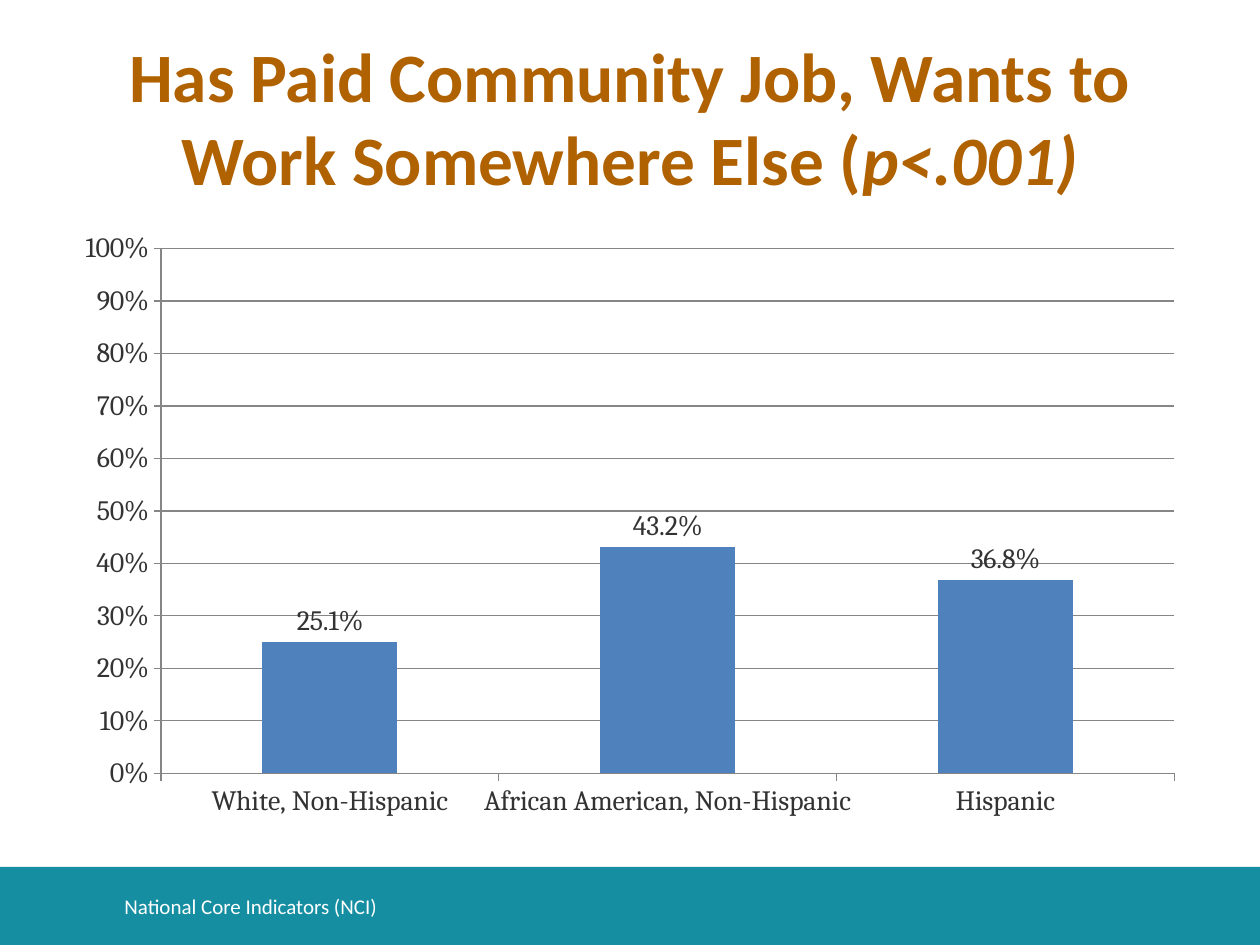
from dataclasses import dataclass

from pptx import Presentation
from pptx.chart.data import CategoryChartData
from pptx.dml.color import RGBColor
from pptx.enum.chart import XL_CHART_TYPE, XL_LABEL_POSITION, XL_TICK_MARK
from pptx.enum.shapes import MSO_SHAPE
from pptx.enum.text import MSO_ANCHOR, MSO_AUTO_SIZE, PP_ALIGN
from pptx.util import Pt


@dataclass(frozen=True)
class Theme:
    title: RGBColor = RGBColor(0xB0, 0x61, 0x00)
    band: RGBColor = RGBColor(0x16, 0x8E, 0xA2)
    bar: RGBColor = RGBColor(0x4F, 0x81, 0xBD)
    line: RGBColor = RGBColor(0x86, 0x86, 0x86)
    ink: RGBColor = RGBColor(0x33, 0x33, 0x33)
    white: RGBColor = RGBColor(0xFF, 0xFF, 0xFF)
    text_font: str = "Calibri"
    chart_font: str = "Cambria"
    title_size: float = 39.6
    chart_size: float = 16
    footer_size: float = 12


THEME = Theme()


def style_font(font, name, size, color):
    font.name = name
    font.size = Pt(size)
    font.color.rgb = color


def add_run(p, text, size, color, bold=False, italic=False):
    r = p.add_run()
    r.text = text
    style_font(r.font, THEME.text_font, size, color)
    r.font.bold = bold
    r.font.italic = italic


def set_frame(tf):
    tf.word_wrap = True
    tf.auto_size = MSO_AUTO_SIZE.NONE
    tf.vertical_anchor = MSO_ANCHOR.MIDDLE


def set_title(s, runs):
    sp = s.shapes.title
    sp.left, sp.top, sp.width, sp.height = Pt(36), Pt(21.6), Pt(648), Pt(90)
    set_frame(sp.text_frame)
    p = sp.text_frame.paragraphs[0]
    p.alignment = PP_ALIGN.CENTER
    for text, italic in runs:
        add_run(p, text, THEME.title_size, THEME.title, bold=True, italic=italic)


def add_footer(s, text):
    band = s.shapes.add_shape(MSO_SHAPE.RECTANGLE, 0, Pt(495.4), Pt(720), Pt(44.6))
    band.shadow.inherit = False
    band.fill.solid()
    band.fill.fore_color.rgb = THEME.band
    band.line.fill.background()

    sp = s.shapes.add_textbox(Pt(64), Pt(503.5), Pt(533), Pt(29))
    set_frame(sp.text_frame)
    add_run(sp.text_frame.paragraphs[0], text, THEME.footer_size, THEME.white)


def style_axis(axis):
    axis.major_tick_mark = XL_TICK_MARK.OUTSIDE
    axis.minor_tick_mark = XL_TICK_MARK.NONE
    axis.format.line.color.rgb = THEME.line
    style_font(axis.tick_labels.font, THEME.chart_font, THEME.chart_size, THEME.ink)


def add_bar_chart(s, values):
    data = CategoryChartData()
    data.categories = list(values)
    data.add_series("Series 1", list(values.values()))
    chart = s.shapes.add_chart(XL_CHART_TYPE.COLUMN_CLUSTERED, Pt(36), Pt(126),
                               Pt(648), Pt(348), data).chart
    chart.has_title = False
    chart.has_legend = False
    style_font(chart.font, THEME.chart_font, THEME.chart_size, THEME.ink)

    # Axes
    style_axis(chart.category_axis)
    axis = chart.value_axis
    style_axis(axis)
    axis.minimum_scale, axis.maximum_scale, axis.major_unit = 0, 1, 0.1
    axis.tick_labels.number_format = "0%"
    axis.tick_labels.number_format_is_linked = False
    axis.has_major_gridlines = True
    axis.major_gridlines.format.line.color.rgb = THEME.line

    # Bars and their labels
    plot = chart.plots[0]
    plot.gap_width = 150
    plot.vary_by_categories = False
    series = plot.series[0]
    series.format.fill.solid()
    series.format.fill.fore_color.rgb = THEME.bar
    labels = series.data_labels
    labels.show_value = True
    labels.number_format = "0.0%"
    labels.number_format_is_linked = False
    labels.position = XL_LABEL_POSITION.OUTSIDE_END
    style_font(labels.font, THEME.chart_font, THEME.chart_size, THEME.ink)


def main():
    prs = Presentation()
    prs.slide_width, prs.slide_height = Pt(720), Pt(540)
    s = prs.slides.add_slide(prs.slide_layouts[5])

    add_footer(s, "National Core Indicators (NCI)")
    set_title(s, [("Has Paid Community Job, Wants to Work Somewhere Else (", False),
                  ("p<.001)", True)])
    add_bar_chart(s, {"White, Non-Hispanic": 0.251,
                      "African American, Non-Hispanic": 0.432,
                      "Hispanic": 0.368})
    prs.save("out.pptx")


if __name__ == "__main__":
    main()
